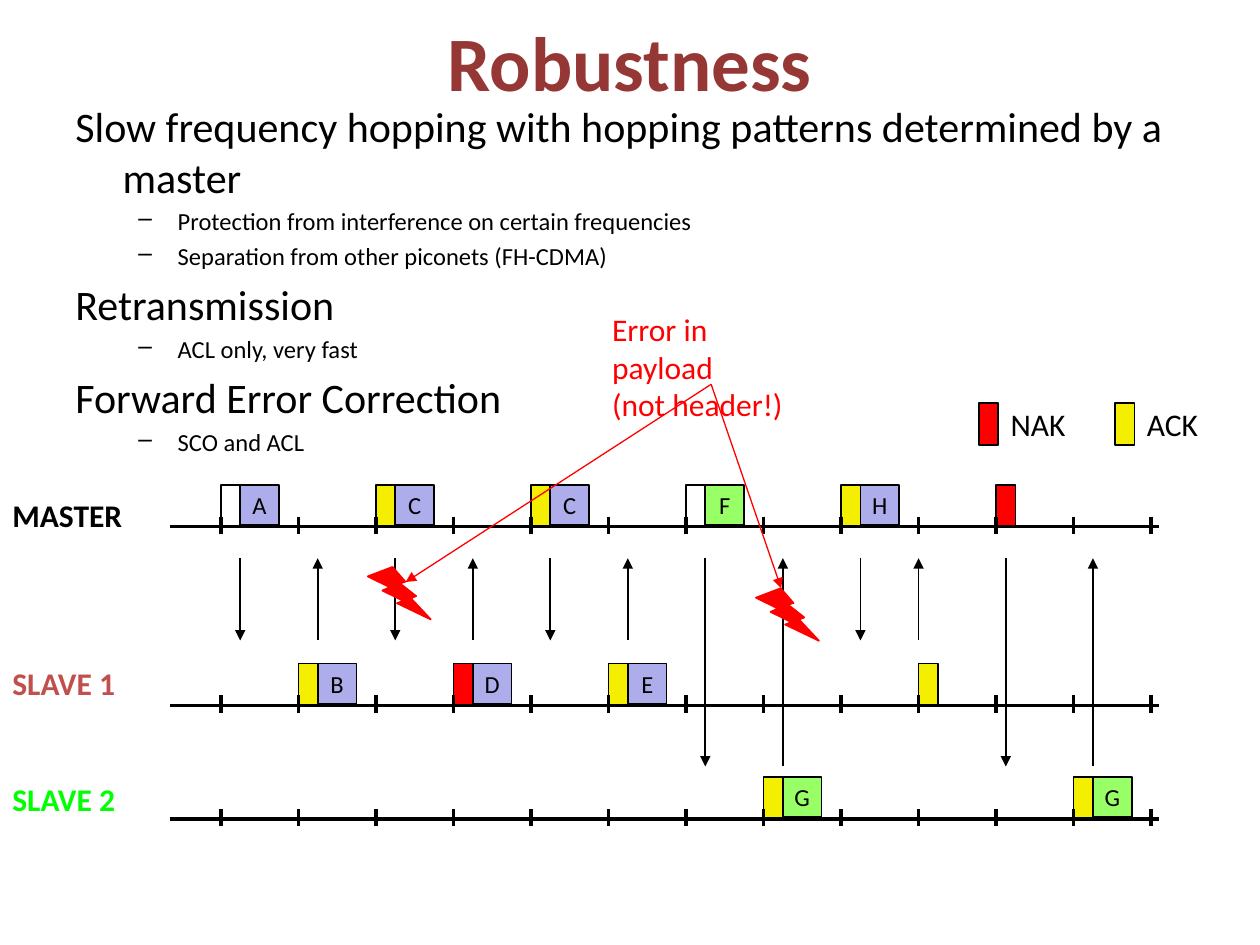
"""Build the Robustness slide: protocol notes above a master and slave timing diagram."""
from dataclasses import dataclass

from lxml.etree import SubElement
from pptx import Presentation
from pptx.dml.color import RGBColor
from pptx.enum.shapes import MSO_CONNECTOR, MSO_SHAPE
from pptx.enum.text import MSO_ANCHOR, PP_ALIGN
from pptx.oxml.ns import qn
from pptx.util import Pt


@dataclass(frozen=True)
class Theme:
    font: str = "Calibri"
    ink: str = "000000"
    paper: str = "FFFFFF"
    title: str = "953735"
    slave1: str = "C0504D"
    slave2: str = "00FF00"
    nak: str = "FF0000"
    ack: str = "F4EE00"
    data1: str = "ADADEB"
    data2: str = "99FF66"
    title_size: float = 44
    topic_size: float = 24
    label_size: float = 18
    detail_size: float = 14


THEME = Theme()

MASTER, SLAVE1, SLAVE2 = range(3)
BASELINES = (301, 403.2, 468)
AXIS_START, AXIS_END = 97.2, 662.4
FIRST_SLOT, SLOT, SLOT_COUNT = 126.2, 44.3, 13
HEADER_WIDTH, HEADER_HEIGHT = SLOT / 4, 24
PAYLOAD_WIDTH, PAYLOAD_HEIGHT = SLOT / 2, 23
ARROW_TOP = 319
ARROW_BOTTOMS = {SLAVE1: 366, SLAVE2: 438}

NOTES = (
    (0, "Slow frequency hopping with hopping patterns determined by a master"),
    (1, "Protection from interference on certain frequencies"),
    (1, "Separation from other piconets (FH-CDMA)"),
    (0, "Retransmission"),
    (1, "ACL only, very fast"),
    (0, "Forward Error Correction"),
    (1, "SCO and ACL"),
)

# Sender, slave in the exchange, slot, header colour, payload, arrow offset
PACKETS = (
    (MASTER, SLAVE1, 0, THEME.paper, "A", HEADER_WIDTH),
    (SLAVE1, SLAVE1, 1, THEME.ack, "B", HEADER_WIDTH),
    (MASTER, SLAVE1, 2, THEME.ack, "C", HEADER_WIDTH),
    (SLAVE1, SLAVE1, 3, THEME.nak, "D", HEADER_WIDTH),
    (MASTER, SLAVE1, 4, THEME.ack, "C", HEADER_WIDTH),
    (SLAVE1, SLAVE1, 5, THEME.ack, "E", HEADER_WIDTH),
    (MASTER, SLAVE2, 6, THEME.paper, "F", HEADER_WIDTH),
    (SLAVE2, SLAVE2, 7, THEME.ack, "G", HEADER_WIDTH),
    (MASTER, SLAVE1, 8, THEME.ack, "H", HEADER_WIDTH),
    (SLAVE1, SLAVE1, 9, THEME.ack, "", 0),
    (MASTER, SLAVE2, 10, THEME.nak, "", HEADER_WIDTH / 2),
    (SLAVE2, SLAVE2, 11, THEME.ack, "G", HEADER_WIDTH),
)


def add_run(paragraph, text, size, color=THEME.ink, bold=False):
    run = paragraph.add_run()
    run.text = text
    run.font.name = THEME.font
    run.font.size = Pt(size)
    run.font.bold = bold
    run.font.color.rgb = RGBColor.from_string(color)


def add_label(slide, left, top, width, height, lines, color=THEME.ink,
              bold=False, size=THEME.label_size):
    label = slide.shapes.add_textbox(Pt(left), Pt(top), Pt(width), Pt(height))
    frame = label.text_frame
    frame.word_wrap = True
    for index, line in enumerate(lines):
        paragraph = frame.add_paragraph() if index else frame.paragraphs[0]
        add_run(paragraph, line, size, color, bold)
    return label


def add_title(slide):
    title = add_label(slide, 36, 21.6, 648, 26.6, ["Robustness"],
                      THEME.title, True, THEME.title_size)
    title.text_frame.vertical_anchor = MSO_ANCHOR.MIDDLE
    title.text_frame.paragraphs[0].alignment = PP_ALIGN.CENTER


def add_notes(slide):
    frame = slide.shapes.add_textbox(Pt(36), Pt(54), Pt(648), Pt(468)).text_frame
    frame.word_wrap = True
    for index, (level, text) in enumerate(NOTES):
        paragraph = frame.add_paragraph() if index else frame.paragraphs[0]
        size = THEME.detail_size if level else THEME.topic_size
        margin, indent = (58.5, -22.5) if level else (27, -27)
        paragraph.level = level
        paragraph.space_before = Pt(size * 0.2)
        properties = paragraph._p.get_or_add_pPr()
        properties.set("marL", str(Pt(margin)))
        properties.set("indent", str(Pt(indent)))
        if level:
            SubElement(properties, qn("a:buChar"), char="–")
        else:
            SubElement(properties, qn("a:buNone"))
        add_run(paragraph, text, size)


def add_block(slide, kind, left, top, width, height, color, outline=THEME.ink):
    block = slide.shapes.add_shape(kind, Pt(left), Pt(top), Pt(width), Pt(height))
    block.shadow.inherit = False
    block.fill.solid()
    block.fill.fore_color.rgb = RGBColor.from_string(color)
    block.line.color.rgb = RGBColor.from_string(outline)
    block.line.width = Pt(1)
    return block


def add_line(slide, start, end, width, color=THEME.ink, arrow=False):
    line = slide.shapes.add_connector(
        MSO_CONNECTOR.STRAIGHT, *(Pt(value) for value in (*start, *end)))
    line.line.color.rgb = RGBColor.from_string(color)
    line.line.width = Pt(width)
    if arrow:
        SubElement(line.line._get_or_add_ln(), qn("a:tailEnd"), type="triangle")
    SubElement(line._element.spPr, qn("a:effectLst"))
    return line


def add_packet(slide, sender, slave, slot, header_color, payload, arrow_offset):
    left = FIRST_SLOT + slot * SLOT
    top = BASELINES[sender] - HEADER_HEIGHT
    add_block(slide, MSO_SHAPE.RECTANGLE, left, top,
              HEADER_WIDTH, HEADER_HEIGHT, header_color)
    if payload:
        color = THEME.data1 if slave == SLAVE1 else THEME.data2
        data = add_block(slide, MSO_SHAPE.RECTANGLE, left + HEADER_WIDTH, top,
                         PAYLOAD_WIDTH, PAYLOAD_HEIGHT, color)
        frame = data.text_frame
        frame.word_wrap = False
        frame.vertical_anchor = MSO_ANCHOR.MIDDLE
        frame.paragraphs[0].alignment = PP_ALIGN.CENTER
        add_run(frame.paragraphs[0], payload, THEME.detail_size)
    arrow_x = left + arrow_offset
    upper, lower = (arrow_x, ARROW_TOP), (arrow_x, ARROW_BOTTOMS[slave])
    start, end = (upper, lower) if sender == MASTER else (lower, upper)
    add_line(slide, start, end, 1, arrow=True)


def add_time_axis(slide, baseline):
    for slot in range(SLOT_COUNT):
        tick = FIRST_SLOT + slot * SLOT
        add_line(slide, (tick, baseline - 5.8), (tick, baseline + 4.3), 2)
    add_line(slide, (AXIS_START, baseline), (AXIS_END, baseline), 2)


def add_legend(slide):
    for left, color, name in ((559.4, THEME.nak, "NAK"), (637.2, THEME.ack, "ACK")):
        add_block(slide, MSO_SHAPE.RECTANGLE, left, 230.4,
                  HEADER_WIDTH, HEADER_HEIGHT, color)
        add_label(slide, left + HEADER_WIDTH, 228.2, 47.5, 26.6, [name])


def add_errors(slide):
    for left, top in ((210.2, 324), (432, 336.2)):
        add_block(slide, MSO_SHAPE.LIGHTNING_BOLT, left, top, 36, 30,
                  THEME.nak, THEME.nak)
    message = add_label(slide, 342.7, 173.5, 127.4, 46.1,
                        ["Error in payload", "(not header!)"], THEME.nak)
    for target in ((231.8, 332.6), (446.4, 336.2)):
        pointer = add_line(slide, (406.4, 219.6), target, 0.75, THEME.nak, True)
        pointer.begin_connect(message, 2)


def main():
    presentation = Presentation()
    presentation.slide_width, presentation.slide_height = Pt(720), Pt(540)
    slide = presentation.slides.add_slide(presentation.slide_layouts[6])
    add_title(slide)
    add_notes(slide)
    stations = (("MASTER", 280, THEME.ink), ("SLAVE 1", 375.8, THEME.slave1),
                ("SLAVE 2", 442, THEME.slave2))
    for name, top, color in stations:
        add_label(slide, 0, top, 89, 26, [name], color, True)
    for packet in PACKETS:
        add_packet(slide, *packet)
    add_legend(slide)
    for baseline in BASELINES:
        add_time_axis(slide, baseline)
    add_errors(slide)
    presentation.save("out.pptx")


if __name__ == "__main__":
    main()
